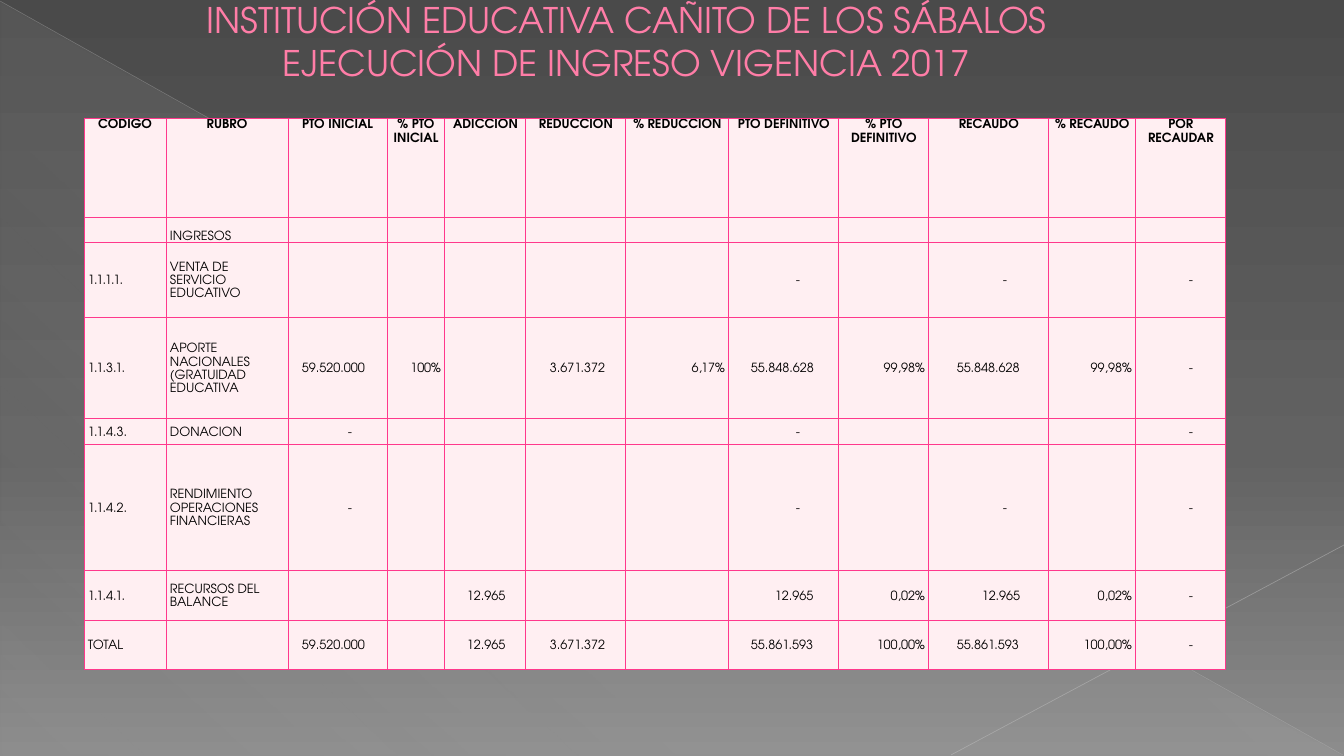
import dataclasses
import itertools

import lxml.etree
import pptx
import pptx.dml.color
import pptx.enum.shapes
import pptx.enum.text
import pptx.oxml.ns
import pptx.util

qn = pptx.oxml.ns.qn
ALIGN = pptx.enum.text.PP_ALIGN
ANCHOR = pptx.enum.text.MSO_ANCHOR


@dataclasses.dataclass(frozen=True)
class Theme:
    font: str = "TeX Gyre Adventor"
    title_size: float = 25.2
    cell_size: float = 9
    title: str = "FF7DA7"
    title_outline: str = "B12761"
    text: str = "000000"
    cell: str = "FFEFF2"
    border: str = "FF388C"
    background: tuple = ((0, "4A4A4A", 100), (60, "626262", 100), (100, "8C8C8C", 100))
    sheen: tuple = ((0, "D2D2D2", 10), (70, "D2D2D2", 8), (100, "D2D2D2", 1))
    long_line: str = "BFBFBF"
    short_line: str = "C6C6C6"


def px(n):
    return pptx.util.Emu(round(n * 914400 / 100.8))


def rgb(value):
    return pptx.dml.color.RGBColor.from_string(value)


def add_xml(parent, tag, **attrs):
    return lxml.etree.SubElement(parent, qn(tag), {k: str(v) for k, v in attrs.items()})


def add_color(parent, color, opacity=100):
    clr = add_xml(parent, "a:srgbClr", val=color)
    if opacity < 100:
        add_xml(clr, "a:alpha", val=opacity * 1000)


def add_line(parent, tag, color, width):
    ln = add_xml(parent, tag, w=round(width * 12700))
    add_color(add_xml(ln, "a:solidFill"), color)
    return ln


def write(tf, text, *, font, size, color, bold=False, align=ALIGN.LEFT,
          spacing=None, indent=0, outline=None):
    p = tf.paragraphs[0]
    p.text = text
    p.alignment = align
    if spacing:
        p.line_spacing = spacing
    if indent:
        p._p.get_or_add_pPr().set("marL", str(px(indent)))
    for r in p.runs:
        r.font.name = font
        r.font.size = pptx.util.Pt(size)
        r.font.bold = bold
        r.font.color.rgb = rgb(color)
        if outline:
            r._r.get_or_add_rPr().insert(0, add_line(r._r.rPr, "a:ln", outline, 0.5))
    if not text:
        add_xml(p._p, "a:endParaRPr", sz=round(size * 100))


class SlideBuilder:
    def __init__(self, prs, theme):
        self.theme = theme
        self.s = prs.slides.add_slide(prs.slide_layouts[6])

    def gradient(self, fill, element, stops, angle):
        fill.gradient()
        grad = element.find(".//" + qn("a:gradFill"))
        gs_list = grad.find(qn("a:gsLst"))
        for gs in list(gs_list):
            gs_list.remove(gs)
        for pos, color, opacity in stops:
            add_color(add_xml(gs_list, "a:gs", pos=pos * 1000), color, opacity)
        grad.find(qn("a:lin")).set("ang", str(angle * 60000))

    def background(self):
        self.gradient(self.s.background.fill, self.s.element, self.theme.background, 90)

    def triangle(self, x, y, w, h):
        kind = pptx.enum.shapes.MSO_SHAPE.RIGHT_TRIANGLE
        sp = self.s.shapes.add_shape(kind, px(x), px(y), px(w), px(h))
        sp.shadow.inherit = False
        sp.line.fill.background()
        self.gradient(sp.fill, sp.element.spPr, self.theme.sheen, 133)

    def line(self, x1, y1, x2, y2, color, width, opacity):
        kind = pptx.enum.shapes.MSO_CONNECTOR.STRAIGHT
        cxn = self.s.shapes.add_connector(kind, px(x1), px(y1), px(x2), px(y2))
        cxn.line.width = pptx.util.Pt(width)
        cxn.line.color.rgb = rgb(color)
        clr = cxn.element.spPr.find(".//" + qn("a:srgbClr"))
        add_xml(clr, "a:alpha", val=opacity * 1000)
        add_xml(cxn.element.spPr, "a:effectLst")

    def title(self, text, x, y, w, h, *, indent, bottom):
        t = self.theme
        tf = self.s.shapes.add_textbox(px(x), px(y), px(w), px(h)).text_frame
        tf.word_wrap = True
        tf.vertical_anchor = ANCHOR.MIDDLE
        tf.margin_left = tf.margin_right = tf.margin_top = 0
        tf.margin_bottom = px(bottom)
        write(tf, text, font=t.font, size=t.title_size, color=t.title,
              align=ALIGN.CENTER, indent=indent, outline=t.title_outline)

    def table(self, x, y, widths, heights, rows, indents):
        frame = self.s.shapes.add_table(len(heights), len(widths), px(x), px(y),
                                        px(sum(widths)), px(sum(heights)))
        table = frame.table
        table.first_row = table.horz_banding = False
        for column, w in zip(table.columns, widths):
            column.width = px(w)
        for row, h in zip(table.rows, heights):
            row.height = px(h)
        for i, j in itertools.product(range(len(heights)), range(len(widths))):
            text = rows[i].get(j, "")
            self.cell(table.cell(i, j), text, i, indents.get((j, len(text)), 0))

    def cell(self, cell, text, row, indent):
        t = self.theme
        header = row == 0
        align = ALIGN.LEFT
        if header:
            align = ALIGN.CENTER
        elif text.endswith("%"):
            align = ALIGN.RIGHT
        cell.vertical_anchor = {0: ANCHOR.TOP, 1: ANCHOR.BOTTOM}.get(row, ANCHOR.MIDDLE)
        cell.margin_left = cell.margin_right = px(4)
        cell.margin_top = cell.margin_bottom = 0
        write(cell.text_frame, text, font=t.font, size=t.cell_size, color=t.text,
              bold=header, align=align, spacing=1.15, indent=0 if header else indent)
        tc_pr = cell._tc.get_or_add_tcPr()
        for side in ("a:lnL", "a:lnR", "a:lnT", "a:lnB"):
            add_line(tc_pr, side, t.border, 0.75)
        cell.fill.solid()
        cell.fill.fore_color.rgb = rgb(t.cell)


HEADERS = ("CODIGO", "RUBRO", "PTO INICIAL", "% PTO INICIAL", "ADICCION", "REDUCCION",
           "% REDUCCION", "PTO DEFINITIVO", "% PTO DEFINITIVO", "RECAUDO", "% RECAUDO",
           "POR RECAUDAR")
ROWS = [
    dict(enumerate(HEADERS)),
    {1: "INGRESOS"},
    {0: "1.1.1.1.", 1: "VENTA DE SERVICIO EDUCATIVO", 7: "-", 9: "-", 11: "-"},
    {0: "1.1.3.1.", 1: "APORTE NACIONALES (GRATUIDAD EDUCATIVA", 2: "59.520.000",
     3: "100%", 5: "3.671.372", 6: "6,17%", 7: "55.848.628", 8: "99,98%",
     9: "55.848.628", 10: "99,98%", 11: "-"},
    {0: "1.1.4.3.", 1: "DONACION", 2: "-", 7: "-", 11: "-"},
    {0: "1.1.4.2.", 1: "RENDIMIENTO OPERACIONES FINANCIERAS", 2: "-", 7: "-", 9: "-",
     11: "-"},
    {0: "1.1.4.1.", 1: "RECURSOS DEL BALANCE", 4: "12.965", 7: "12.965", 8: "0,02%",
     9: "12.965", 10: "0,02%", 11: "-"},
    {0: "TOTAL", 2: "59.520.000", 4: "12.965", 5: "3.671.372", 7: "55.861.593",
     8: "100,00%", 9: "55.861.593", 10: "100,00%", 11: "-"},
]
COLUMN_WIDTHS = (82, 122, 99, 58, 81, 100, 103, 110, 90, 120, 87, 90)
ROW_HEIGHTS = (100, 25, 75, 101, 26, 126, 50, 49)
AMOUNT_INDENTS = {(2, 10): 10, (2, 1): 56, (4, 6): 18, (5, 9): 20, (7, 10): 18,
                  (7, 6): 42, (7, 1): 63, (9, 10): 24, (9, 6): 49, (9, 1): 70,
                  (11, 1): 49}


def main():
    prs = pptx.Presentation()
    prs.slide_width, prs.slide_height = px(1344), px(756)
    theme = Theme()
    slide = SlideBuilder(prs, theme)
    slide.background()
    slide.triangle(1, 2, 1342, 754)
    slide.line(0, 1, 1343, 755, theme.long_line, 0.39, 35)
    slide.line(1344, 545, 951, 755, theme.short_line, 0.47, 45)
    slide.title("INSTITUCIÓN EDUCATIVA CAÑITO DE LOS SÁBALOS\v"
                "EJECUCIÓN DE INGRESO VIGENCIA 2017",
                134, 25, 932, 93, indent=53, bottom=61)
    slide.table(84, 118, COLUMN_WIDTHS, ROW_HEIGHTS, ROWS, AMOUNT_INDENTS)
    prs.save("out.pptx")


if __name__ == "__main__":
    main()
